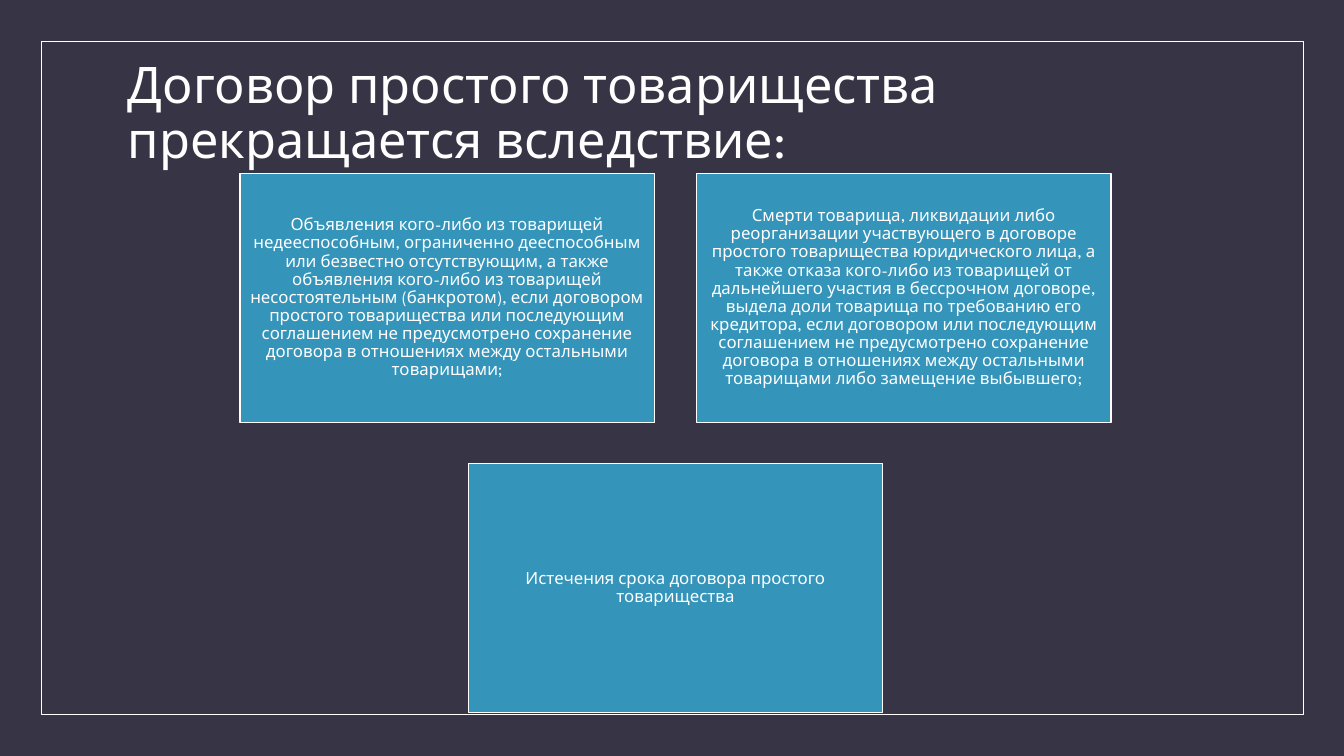
from dataclasses import dataclass

from pptx import Presentation
from pptx.dml.color import RGBColor
from pptx.enum.shapes import MSO_SHAPE
from pptx.enum.text import MSO_ANCHOR, PP_ALIGN
from pptx.shapes.autoshape import Shape
from pptx.slide import Slide
from pptx.util import Inches, Pt

FONT = "League Spartan"
WHITE = "FFFFFF"
BLUE = "3494BA"
BACKGROUND = "373545"

CARD_W, CARD_H = 4.11, 2.47
GAP = 0.42
LEFT, TOP = 2.38, 1.72
STEP_X = CARD_W + GAP
STEP_Y = CARD_H + GAP - 0.01


@dataclass(frozen=True)
class Card:
    column: float
    row: int
    text: str


CARDS = [
    Card(0, 0, "Объявления кого-либо из товарищей недееспособным, ограниченно "
         "дееспособным или безвестно отсутствующим, а также объявления "
         "кого-либо из товарищей несостоятельным (банкротом), если договором "
         "простого товарищества или последующим соглашением не предусмотрено "
         "сохранение договора в отношениях между остальными товарищами;"),
    Card(1, 0, "Смерти товарища, ликвидации либо реорганизации участвующего в "
         "договоре простого товарищества юридического лица, а также отказа "
         "кого-либо из товарищей от дальнейшего участия в бессрочном договоре, "
         "выдела доли товарища по требованию его кредитора, если договором или "
         "последующим соглашением не предусмотрено сохранение договора в "
         "отношениях между остальными товарищами либо замещение выбывшего;"),
    Card(0.5, 1, "Истечения срока договора простого товарищества"),
]


def color(value: str) -> RGBColor:
    return RGBColor.from_string(value)


def add_rect(s: Slide, x: float, y: float, w: float, h: float,
             line_width: float) -> Shape:
    sp = s.shapes.add_shape(MSO_SHAPE.RECTANGLE, Inches(x), Inches(y),
                            Inches(w), Inches(h))
    sp.shadow.inherit = False
    sp.fill.background()
    sp.line.color.rgb = color(WHITE)
    sp.line.width = Pt(line_width)
    return sp


def write_text(sp: Shape, text: str, size: float, align: PP_ALIGN) -> None:
    tf = sp.text_frame
    tf.word_wrap = True
    tf.vertical_anchor = MSO_ANCHOR.MIDDLE
    p = tf.paragraphs[0]
    p.alignment = align
    p.line_spacing = 0.9
    r = p.add_run()
    r.text = text
    r.font.name = FONT
    r.font.size = Pt(size)
    r.font.color.rgb = color(WHITE)


def add_title(s: Slide, text: str) -> None:
    sp = s.shapes.add_textbox(Inches(1.17), Inches(0.39), Inches(11), Inches(1.5))
    write_text(sp, text, 36, PP_ALIGN.LEFT)


def add_card(s: Slide, card: Card) -> None:
    sp = add_rect(s, LEFT + card.column * STEP_X, TOP + card.row * STEP_Y,
                  CARD_W, CARD_H, 1)
    sp.fill.solid()
    sp.fill.fore_color.rgb = color(BLUE)
    tf = sp.text_frame
    tf.margin_left = tf.margin_right = Inches(0.05)
    tf.margin_top = tf.margin_bottom = Inches(0.05)
    write_text(sp, card.text, 12, PP_ALIGN.CENTER)


def main() -> None:
    prs = Presentation()
    prs.slide_width = Inches(13.33)
    prs.slide_height = Inches(7.5)
    s = prs.slides.add_slide(prs.slide_layouts[6])
    s.background.fill.solid()
    s.background.fill.fore_color.rgb = color(BACKGROUND)
    add_rect(s, 0.41, 0.41, 12.52, 6.68, 0.5)
    add_title(s, "Договор простого товарищества прекращается вследствие:")
    for card in CARDS:
        add_card(s, card)
    prs.save("out.pptx")


if __name__ == "__main__":
    main()
